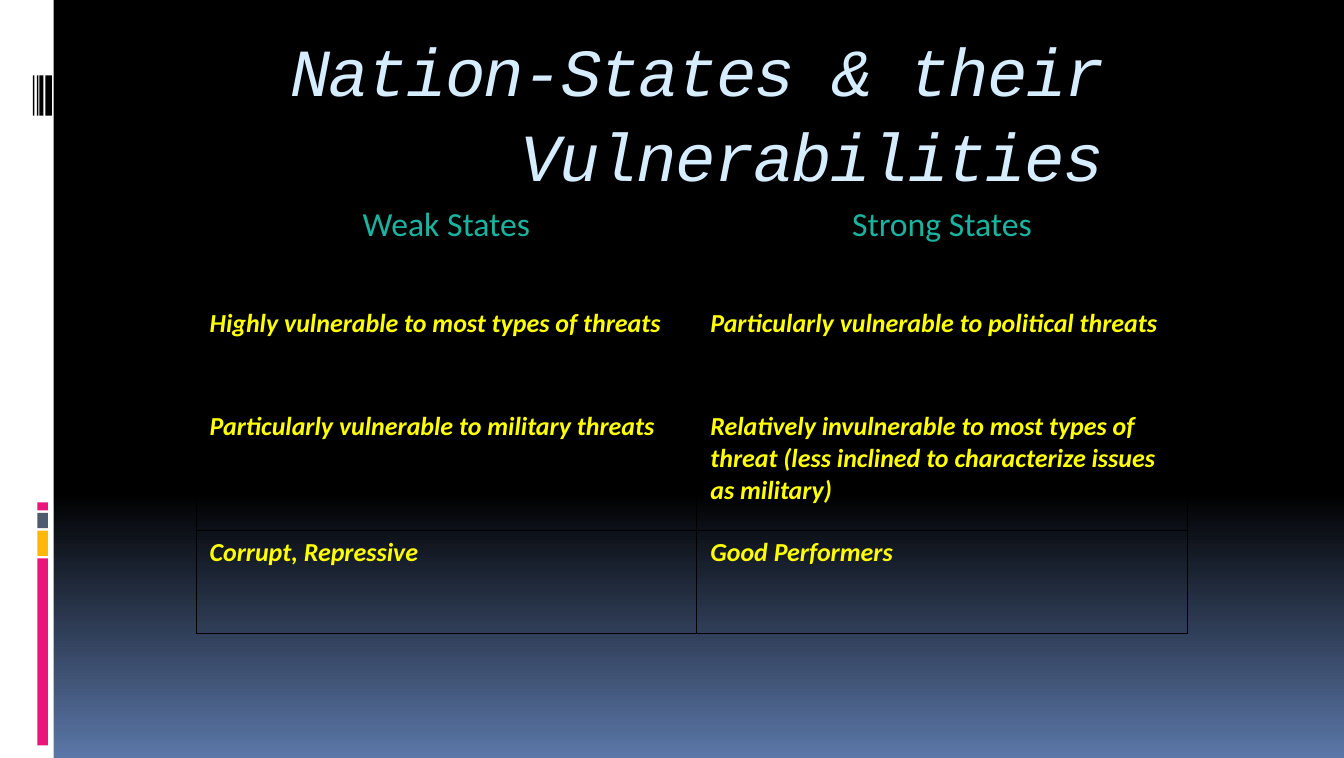
from copy import deepcopy

from lxml import etree
from pptx import Presentation
from pptx.dml.color import RGBColor
from pptx.enum.shapes import MSO_SHAPE
from pptx.enum.text import MSO_ANCHOR, MSO_AUTO_SIZE, PP_ALIGN
from pptx.oxml.ns import qn
from pptx.util import Inches, Pt

RECTANGLE = MSO_SHAPE.RECTANGLE
TOP = MSO_ANCHOR.TOP
LEFT, CENTER, RIGHT = PP_ALIGN.LEFT, PP_ALIGN.CENTER, PP_ALIGN.RIGHT

WIDTH, HEIGHT = 26.6, 15
TITLE_ONLY_LAYOUT = 5
COLORS = {
    "black": "000000", "white": "FFFFFF", "horizon": "5B77A8",
    "pink": "EA157A", "amber": "FEB80A", "slate": "4E5B6F",
    "title": "D6ECFF", "header": "1AB39F", "body": "FFFF00",
}
STATES = [
    ("Weak States", "Strong States"),
    ("Highly vulnerable to most types of threats",
     "Particularly vulnerable to political threats"),
    ("Particularly vulnerable to military threats",
     "Relatively invulnerable to most types of threat "
     "(less inclined to characterize issues as military)"),
    ("Corrupt, Repressive", "Good Performers"),
]


def color(name):
    return RGBColor.from_string(COLORS[name])


def set_margins(target, horizontal, vertical):
    target.margin_left = target.margin_right = Inches(horizontal)
    target.margin_top = target.margin_bottom = Inches(vertical)


def style(paragraph, font_name, size, color_name, alignment, bold=False, italic=False):
    paragraph.alignment = alignment
    font = paragraph.font
    font.name, font.size = font_name, Pt(size)
    font.bold, font.italic = bold, italic
    font.color.rgb = color(color_name)


def add_bar(slide, left, top, width, height, color_name):
    bar = slide.shapes.add_shape(
        RECTANGLE, Inches(left), Inches(top), Inches(width), Inches(height))
    bar.shadow.inherit = False
    bar.fill.solid()
    bar.fill.fore_color.rgb = color(color_name)
    bar.line.fill.background()


def paint_background(slide):
    """Black down to 65 %, then fading to blue at the bottom."""
    fill = slide.background.fill
    fill.gradient()
    fill.gradient_angle = 270
    first, last = fill.gradient_stops
    first.color.rgb, last.color.rgb = color("black"), color("horizon")
    first.position, last.position = 0, 1
    stops = next(slide.element.iter(qn("a:gsLst")))
    middle = deepcopy(stops[0])
    middle.set("pos", "65000")
    stops.insert(1, middle)


def add_side_strip(slide, left, top, width, height):
    add_bar(slide, left, top, width, height, "white")
    # Coloured blocks, stacked upwards from the bottom
    bottom = top + height - 0.25
    for block_height, name in ((3.7, "pink"), (0.5, "amber"), (0.3, "slate"), (0.16, "pink")):
        add_bar(slide, left + 0.74, bottom - block_height, 0.21, block_height, name)
        bottom -= block_height + 0.05
    # Barcode stripes
    for offset, stripe_width in ((0.9, 0.13), (0.78, 0.08), (0.73, 0.03), (0.65, 0.03)):
        add_bar(slide, left + offset, top + 1.49, stripe_width, 0.8, "black")


def set_title(slide, left, top, width, height):
    title = slide.shapes.title
    title.left, title.top = Inches(left), Inches(top)
    title.width, title.height = Inches(width), Inches(height)
    frame = title.text_frame
    frame.text = "Nation-States & their Vulnerabilities"
    frame.word_wrap = True
    frame.auto_size = MSO_AUTO_SIZE.NONE
    frame.vertical_anchor = TOP
    set_margins(frame, 0.27, 0.27)
    paragraph = frame.paragraphs[0]
    style(paragraph, "Courier New", 96, "title", RIGHT, italic=True)
    paragraph.line_spacing = 1.05
    paragraph.runs[0].font._element.set("spc", "-240")


def add_borders(cell):
    properties = cell._tc.get_or_add_tcPr()
    for position, side in enumerate(("lnL", "lnR", "lnT", "lnB")):
        line = etree.Element(qn(f"a:{side}"), w=str(Pt(1)))
        fill = etree.SubElement(line, qn("a:solidFill"))
        etree.SubElement(fill, qn("a:srgbClr"), val=COLORS["black"])
        properties.insert(position, line)


def add_states_table(slide, left, top, column_widths, row_heights):
    table = slide.shapes.add_table(
        len(row_heights), len(column_widths), Inches(left), Inches(top),
        Inches(sum(column_widths)), Inches(sum(row_heights))).table
    table.first_row = table.horz_banding = False
    for column, width in zip(table.columns, column_widths):
        column.width = Inches(width)
    for row, height, texts in zip(table.rows, row_heights, STATES):
        row.height = Inches(height)
        for cell, text in zip(row.cells, texts):
            cell.text = text
            cell.fill.background()
            set_margins(cell, 0.27, 0.13)
            add_borders(cell)
            paragraph = cell.text_frame.paragraphs[0]
            if texts is STATES[0]:
                style(paragraph, "Calibri", 48, "header", CENTER)
            else:
                style(paragraph, "Calibri", 37, "body", LEFT, bold=True, italic=True)


def main():
    presentation = Presentation()
    presentation.slide_width, presentation.slide_height = Inches(WIDTH), Inches(HEIGHT)
    slide = presentation.slides.add_slide(presentation.slide_layouts[TITLE_ONLY_LAYOUT])
    paint_background(slide)
    add_side_strip(slide, 0, 0, 0.04 * WIDTH, HEIGHT)
    set_title(slide, 2.59, 0.22, 19.52, 3.48)
    add_states_table(slide, 3.88, 3.91, (9.91, 9.71), (2.05, 2.05, 2.48, 2.05))
    presentation.save("out.pptx")


if __name__ == "__main__":
    main()
